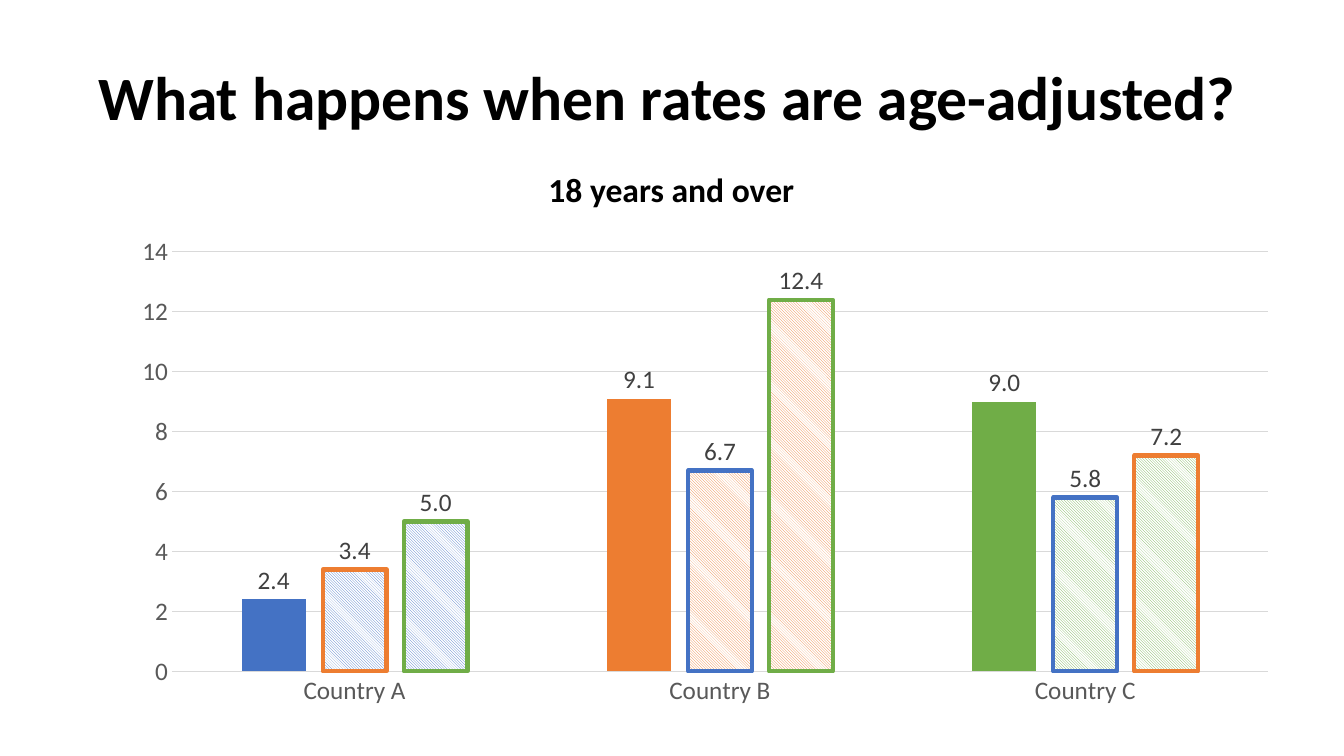
from pptx import Presentation
from pptx import util as u
from pptx.chart.data import CategoryChartData
from pptx.dml.color import RGBColor
from pptx.enum import chart as ch, dml, text

BLACK = RGBColor(0x00, 0x00, 0x00)
WHITE = RGBColor(0xFF, 0xFF, 0xFF)
DARK = RGBColor(0x40, 0x40, 0x40)
GREY = RGBColor(0x59, 0x59, 0x59)
PALE = RGBColor(0xD9, 0xD9, 0xD9)
BLUE = RGBColor(0x44, 0x72, 0xC4)
ORANGE = RGBColor(0xED, 0x7D, 0x31)
GREEN = RGBColor(0x70, 0xAD, 0x47)

HUES = {"Country A": BLUE, "Country B": ORANGE, "Country C": GREEN}
RATES = {
    "Series 1": (2.4, 9.1, 9.0),
    "Series 2": (3.4, 6.7, 5.8),
    "Series 3": (5.0, 12.4, 7.2),
}


class Deck:
    """Holds the text style and the slide being built."""

    face = "Calibri"

    def __init__(self, slide):
        self.slide = slide

    def style(self, font, size, hue, bold=False):
        font.name, font.size, font.bold = self.face, u.Pt(size), bold
        font.color.rgb = hue

    def label(self, box, words, size, anchor, spacing=1.0):
        """Add a centred bold line of text."""
        frame = self.slide.shapes.add_textbox(*map(u.Pt, box)).text_frame
        frame.word_wrap = True
        frame.vertical_anchor = anchor
        frame.text = words
        line = frame.paragraphs[0]
        line.alignment = text.PP_ALIGN.CENTER
        line.line_spacing = spacing
        self.style(line.runs[0].font, size, BLACK, True)

    def axis(self, axis):
        axis.major_tick_mark = axis.minor_tick_mark = ch.XL_TICK_MARK.NONE
        self.style(axis.tick_labels.font, 18, GREY)

    def rule(self, line):
        line.color.rgb = PALE
        line.width = u.Pt(0.75)

    def bars(self, box, rates, hues):
        """Add the column chart, the first series solid and the rest hatched."""
        data = CategoryChartData(number_format="0.0")
        data.categories = list(hues)
        for name, values in rates.items():
            data.add_series(name, values)
        chart = self.slide.shapes.add_chart(
            ch.XL_CHART_TYPE.COLUMN_CLUSTERED, *map(u.Pt, box), data).chart
        chart.has_title = chart.has_legend = False
        self.style(chart.font, 18, BLACK)

        self.axis(chart.category_axis)
        self.rule(chart.category_axis.format.line)
        scale = chart.value_axis
        self.axis(scale)
        scale.minimum_scale, scale.maximum_scale, scale.major_unit = 0, 14, 2
        scale.tick_labels.number_format = "General"
        scale.tick_labels.number_format_is_linked = False
        scale.format.line.fill.background()
        self.rule(scale.major_gridlines.format.line)

        plot = chart.plots[0]
        plot.gap_width, plot.overlap = 219, -27
        plot.vary_by_categories = False
        for rank, series in enumerate(plot.series):
            series.invert_if_negative = False
            for spot, own in enumerate(hues.values()):
                form = series.points[spot].format
                if rank == 0:
                    form.fill.solid()
                    form.fill.fore_color.rgb = own
                else:
                    others = [hue for hue in hues.values() if hue != own]
                    self.hatch(form, own, others[rank - 1])
            tags = series.data_labels
            tags.show_value = True
            tags.position = ch.XL_LABEL_POSITION.OUTSIDE_END
            tags.number_format = "0.0"
            tags.number_format_is_linked = False
            self.style(tags.font, 18, DARK)

    def hatch(self, form, hue, edge):
        form.fill.patterned()
        form.fill.pattern = dml.MSO_PATTERN.DARK_DOWNWARD_DIAGONAL
        form.fill.fore_color.rgb = hue
        form.fill.back_color.rgb = WHITE
        form.line.color.rgb = edge
        form.line.width = u.Pt(3)


def main():
    show = Presentation()
    show.slide_width, show.slide_height = u.Pt(960), u.Pt(540)
    deck = Deck(show.slides.add_slide(show.slide_layouts[6]))
    deck.label((32.4, 19.4, 899.3, 104.4),
               "What happens when rates are age-adjusted? ", 44,
               text.MSO_ANCHOR.MIDDLE, 0.9)
    deck.label((340.6, 117.4, 277.9, 65.5), "18 years and over", 24,
               text.MSO_ANCHOR.TOP)
    deck.bars((85, 162, 837.4, 349.2), RATES, HUES)
    show.save("out.pptx")


if __name__ == "__main__":
    main()
